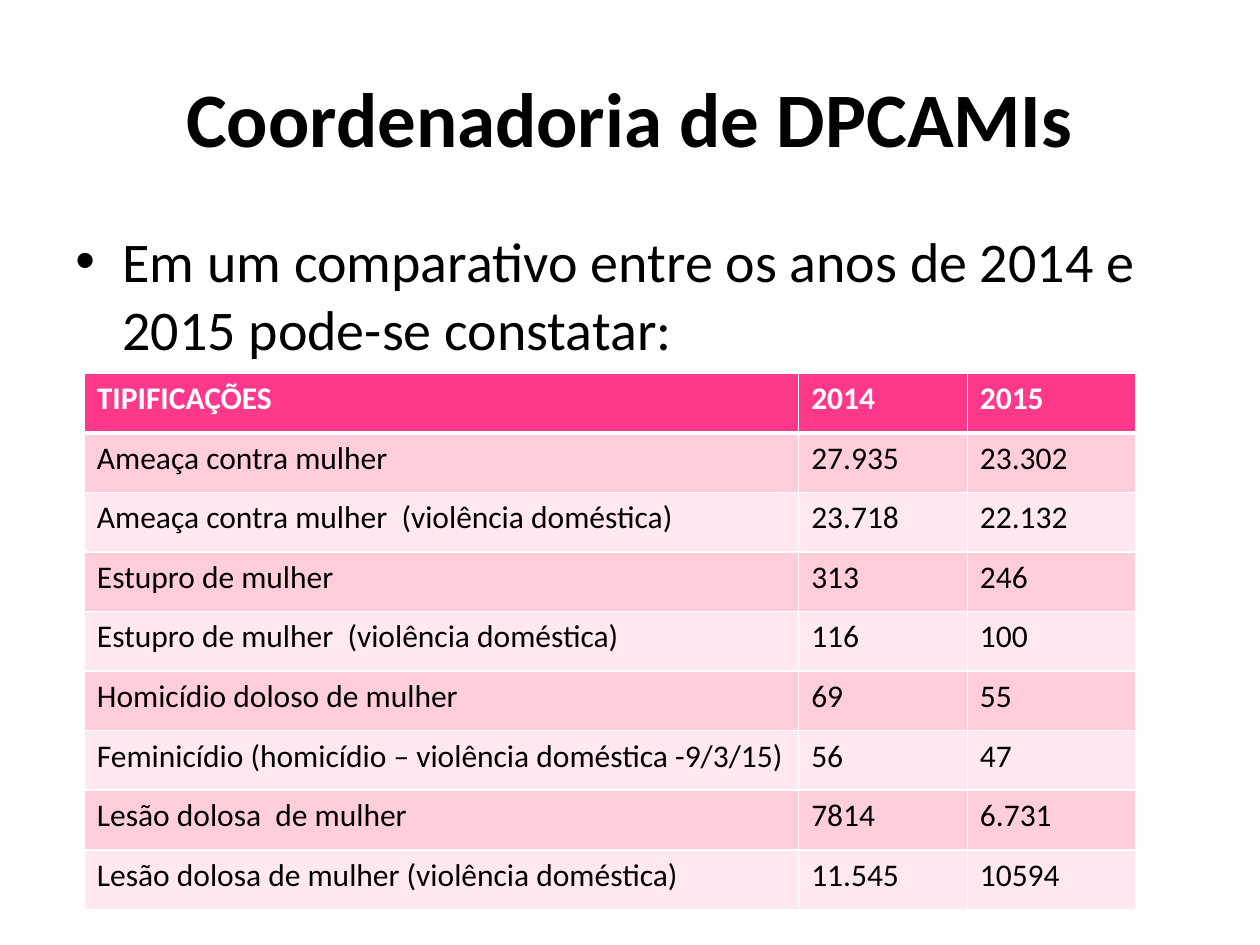
import pptx
import pptx.util
import pptx.dml.color
import pptx.enum.text
import pptx.oxml
import pptx.oxml.ns
import lxml.etree

Cm = pptx.util.Cm
Pt = pptx.util.Pt
RGBColor = pptx.dml.color.RGBColor
qn = pptx.oxml.ns.qn

BLACK = RGBColor(0x00, 0x00, 0x00)
WHITE = RGBColor(0xFF, 0xFF, 0xFF)
PINK = RGBColor(0xFF, 0x38, 0x8C)
BANDS = [RGBColor(0xFF, 0xCE, 0xDA), RGBColor(0xFF, 0xE8, 0xEE)]
FONT = "Calibri"

ROWS = [
    ("TIPIFICAÇÕES", "2014", "2015"),
    ("Ameaça contra mulher", "27.935", "23.302"),
    ("Ameaça contra mulher  (violência doméstica)", "23.718", "22.132"),
    ("Estupro de mulher", "313", "246"),
    ("Estupro de mulher  (violência doméstica)", "116", "100"),
    ("Homicídio doloso de mulher", "69", "55"),
    ("Feminicídio (homicídio – violência doméstica -9/3/15)", "56", "47"),
    ("Lesão dolosa  de mulher", "7814", "6.731"),
    ("Lesão dolosa de mulher (violência doméstica)", "11.545", "10594"),
]
WIDTHS = [Cm(14.4), Cm(3.4), Cm(3.4)]
ROW_HEIGHT = Cm(1.2)


def add_run(p, text, size, color=BLACK, bold=False):
    r = p.add_run()
    r.text = text
    r.font.name = FONT
    r.font.size = Pt(size)
    r.font.bold = bold
    r.font.color.rgb = color


def add_border(cell, side, width):
    ln = lxml.etree.SubElement(cell._tc.get_or_add_tcPr(), qn("a:" + side), w=str(Pt(width)))
    fill = lxml.etree.SubElement(ln, qn("a:solidFill"))
    lxml.etree.SubElement(fill, qn("a:srgbClr"), val=str(WHITE))


prs = pptx.Presentation()
prs.slide_width = Cm(25.4)
prs.slide_height = Cm(19.05)
s = prs.slides.add_slide(prs.slide_layouts[6])

sp = s.shapes.add_textbox(Cm(1.27), Cm(0.76), Cm(22.86), Cm(3.18))
tf = sp.text_frame
tf.word_wrap = True
tf.vertical_anchor = pptx.enum.text.MSO_ANCHOR.MIDDLE
p = tf.paragraphs[0]
p.alignment = pptx.enum.text.PP_ALIGN.CENTER
add_run(p, "Coordenadoria de DPCAMIs", 44, bold=True)

sp = s.shapes.add_textbox(Cm(1.27), Cm(4.45), Cm(22.86), Cm(12.57))
tf = sp.text_frame
tf.word_wrap = True
p = tf.paragraphs[0]
pPr = p._p.get_or_add_pPr()
pPr.set("marL", str(Cm(0.95)))
pPr.set("indent", str(-Cm(0.95)))
lxml.etree.SubElement(pPr, qn("a:buFont"), typeface="Arial")
lxml.etree.SubElement(pPr, qn("a:buChar"), char="•")
add_run(p, "Em um comparativo entre os anos de 2014 e 2015 pode-se constatar:", 32)

table = s.shapes.add_table(
    len(ROWS), len(WIDTHS), Cm(1.7), Cm(7.53), sum(WIDTHS), ROW_HEIGHT * len(ROWS)
).table
for column, width in zip(table.columns, WIDTHS):
    column.width = width
for i, row in enumerate(ROWS):
    table.rows[i].height = ROW_HEIGHT
    header = i == 0
    for j, text in enumerate(row):
        cell = table.cell(i, j)
        add_border(cell, "lnL", 1)
        add_border(cell, "lnR", 1)
        add_border(cell, "lnT", 3 if i == 1 else 1)
        add_border(cell, "lnB", 3 if header else 1)
        cell.fill.solid()
        cell.fill.fore_color.rgb = PINK if header else BANDS[(i - 1) % 2]
        p = cell.text_frame.paragraphs[0]
        add_run(p, text, 18, WHITE if header else BLACK, header)

prs.save("out.pptx")
